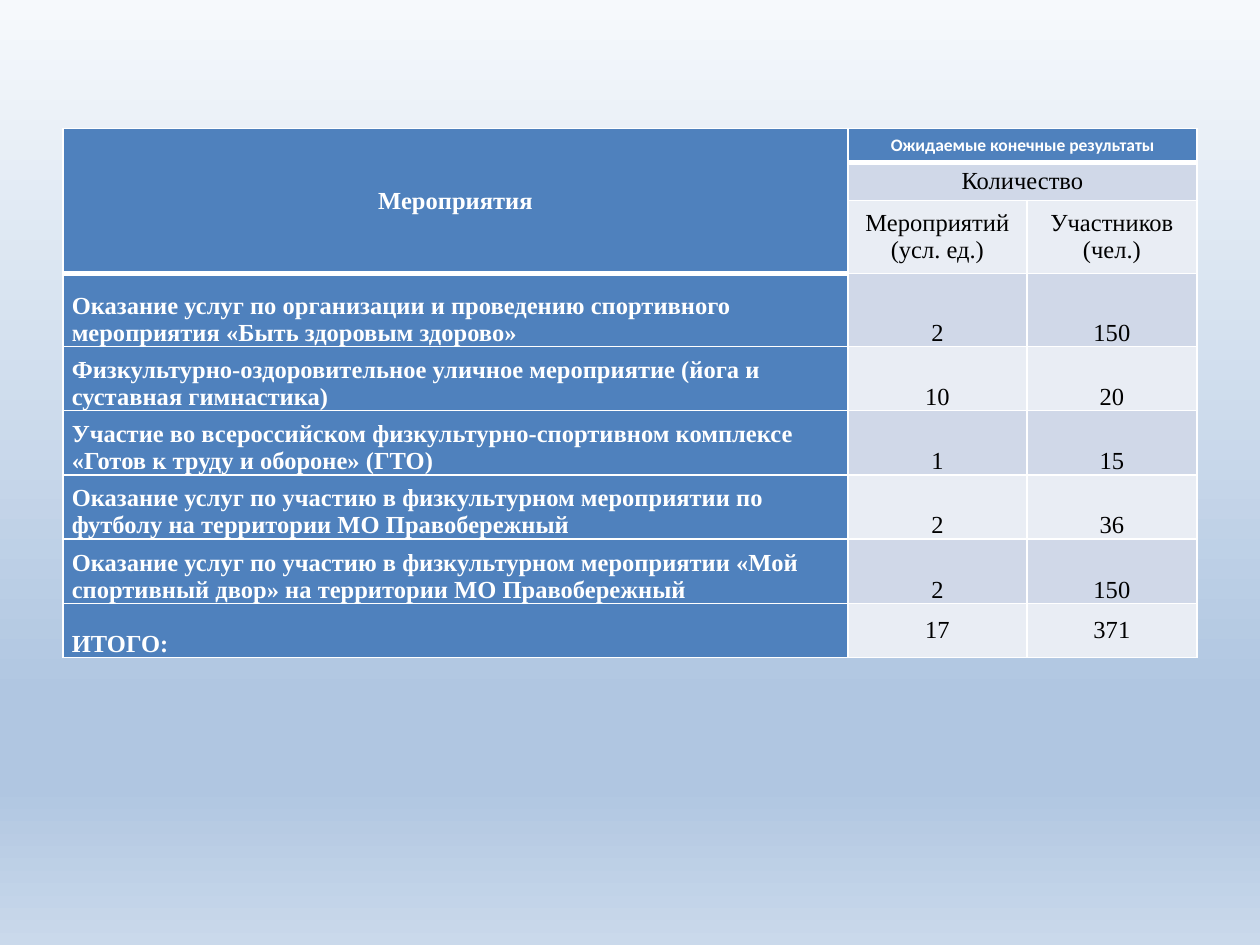
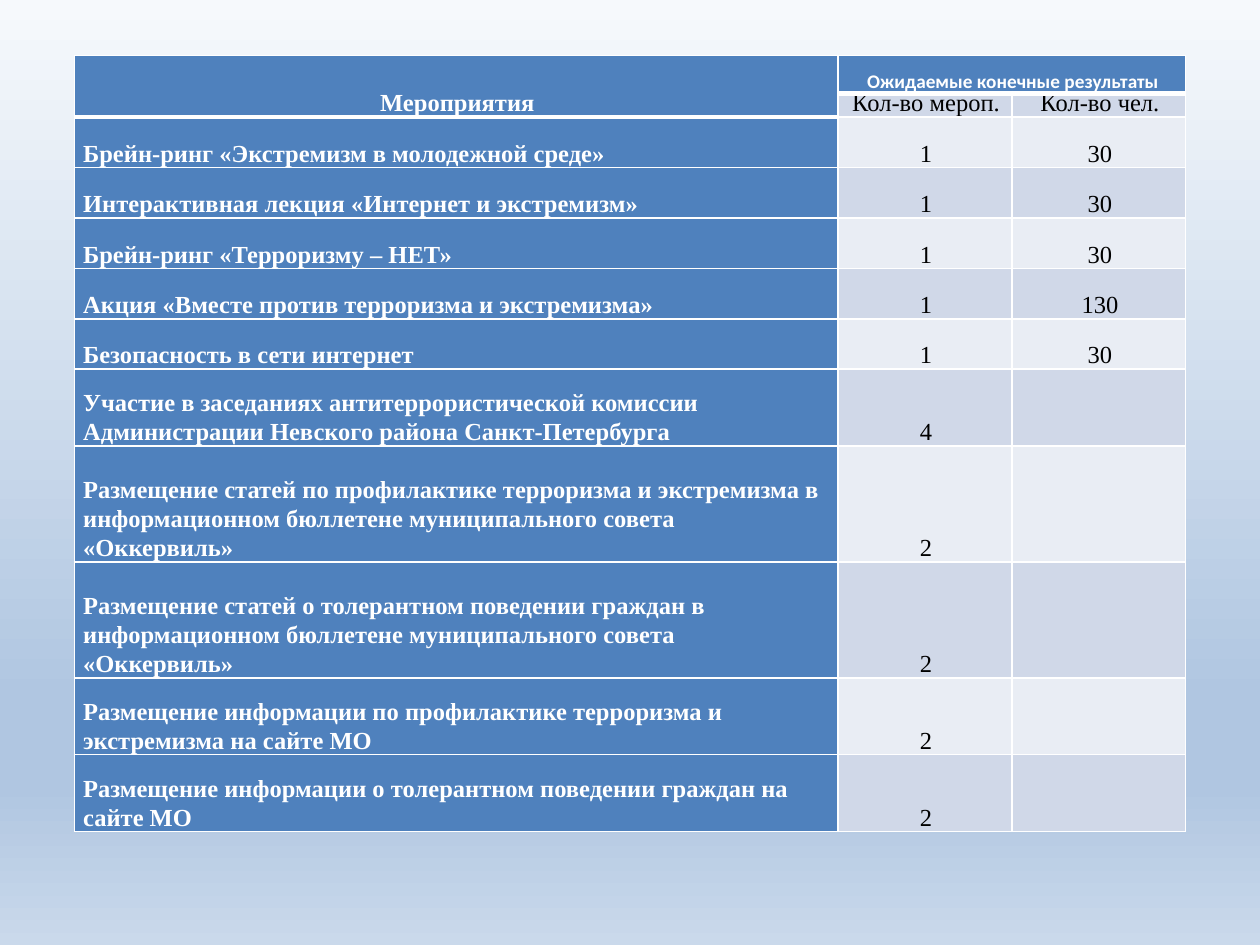
from dataclasses import dataclass
from typing import NamedTuple, Optional

from lxml.etree import SubElement
from pptx import Presentation
from pptx.dml.color import RGBColor
from pptx.enum.text import MSO_ANCHOR as Anchor, PP_ALIGN as Align
from pptx.oxml.ns import qn
from pptx.util import Inches, Pt

COLORS = {
    "header": "4F81BD",
    "band_dark": "D0D8E8",
    "band_light": "E9EDF4",
    "white": "FFFFFF",
    "black": "000000",
}
BACKGROUND_STOPS = {0: "F6F9FC", 74: "B0C6E1", 83: "B0C6E1", 100: "CAD9EB"}
GRID_COLUMNS, GRID_ROWS = 1000, 750
GRID_STEP = Inches(0.01)
THIN, THICK = Pt(1), Pt(3)
BODY_FONT, CAPTION_FONT = "Times New Roman", "Calibri"
CAPTION = "Ожидаемые конечные результаты"


class Span(NamedTuple):
    top: int
    left: int
    bottom: int
    right: int


class Row(NamedTuple):
    height: int
    texts: tuple[str, str, str]
    number_anchor: Anchor = Anchor.BOTTOM


@dataclass(frozen=True)
class ResultsTable:
    left: int
    top: int
    columns: tuple[int, int, int]
    header: list[Row]
    body: list[Row]
    spans: list[Span]
    caption_size: int
    header_anchor: Anchor
    first_band: str
    label_spacing: Optional[float] = None
    number_spacing: Optional[Pt] = None
    number_indent: int = 0


SPORT_TABLE = ResultsTable(
    left=50,
    top=102,
    columns=(623, 142, 135),
    header=[
        Row(27, ("Мероприятия", CAPTION, "")),
        Row(30, ("", "Количество", "")),
        Row(58, ("", "Мероприятий (усл. ед.)", "Участников (чел.)")),
    ],
    body=[
        Row(58, ("Оказание услуг по организации и проведению спортивного мероприятия "
                 "«Быть здоровым здорово»", "2", "150")),
        Row(51, ("Физкультурно-оздоровительное уличное мероприятие "
                 "(йога и суставная гимнастика)", "10", "20")),
        Row(51, ("Участие во всероссийском физкультурно-спортивном комплексе "
                 "«Готов к труду и обороне» (ГТО)", "1", "15")),
        Row(51, ("Оказание услуг по участию в физкультурном мероприятии по футболу "
                 "на территории МО Правобережный", "2", "36")),
        Row(51, ("Оказание услуг по участию в физкультурном мероприятии «Мой спортивный двор» "
                 "на территории МО Правобережный", "2", "150")),
        Row(43, ("ИТОГО:", "17", "371"), Anchor.MIDDLE),
    ],
    spans=[Span(0, 0, 2, 0), Span(0, 1, 0, 2), Span(1, 1, 1, 2)],
    caption_size=10,
    header_anchor=Anchor.MIDDLE,
    first_band="band_dark",
)

SAFETY_TABLE = ResultsTable(
    left=59,
    top=44,
    columns=(606, 138, 138),
    header=[
        Row(30, ("Мероприятия", CAPTION, "")),
        Row(19, ("", "Кол-во мероп.", "Кол-во чел.")),
    ],
    body=[
        Row(40, ("Брейн-ринг «Экстремизм в молодежной среде»", "1", "30")),
        Row(40, ("Интерактивная лекция «Интернет и экстремизм»", "1", "30")),
        Row(40, ("Брейн-ринг «Терроризму – НЕТ»", "1", "30")),
        Row(40, ("Акция «Вместе против терроризма и экстремизма»", "1", "130")),
        Row(40, ("Безопасность в сети интернет", "1", "30")),
        Row(61, ("Участие в заседаниях антитеррористической комиссии "
                 "Администрации Невского района Санкт-Петербурга", "4", "")),
        Row(92, ("Размещение статей по профилактике терроризма и экстремизма "
                 "в информационном бюллетене муниципального совета «Оккервиль»", "2", "")),
        Row(92, ("Размещение статей о толерантном поведении граждан "
                 "в информационном бюллетене муниципального совета «Оккервиль»", "2", "")),
        Row(61, ("Размещение информации по профилактике терроризма и экстремизма "
                 "на сайте МО", "2", "")),
        Row(61, ("Размещение информации о толерантном поведении граждан "
                 "на сайте МО", "2", "")),
    ],
    spans=[Span(0, 0, 1, 0), Span(0, 1, 0, 2)],
    caption_size=11,
    header_anchor=Anchor.BOTTOM,
    first_band="band_light",
    label_spacing=1.07,
    number_spacing=Pt(11),
    number_indent=Inches(0.02),
)


def rgb(name: str) -> RGBColor:
    return RGBColor.from_string(COLORS[name])


def add_solid_fill(parent, color: str) -> None:
    fill = SubElement(parent, qn("a:solidFill"))
    SubElement(fill, qn("a:srgbClr"), val=color)


def paint_background(master) -> None:
    fill = master.background.fill
    fill.gradient()
    fill.gradient_angle = 270
    stops = master.element.find(".//" + qn("a:gsLst"))
    for stop in list(stops):
        stops.remove(stop)
    for percent, color in BACKGROUND_STOPS.items():
        stop = SubElement(stops, qn("a:gs"), pos=str(percent * 1000))
        SubElement(stop, qn("a:srgbClr"), val=color)


def set_borders(cell, top: int, bottom: int) -> None:
    properties = cell._tc.get_or_add_tcPr()
    for side, width in {"L": THIN, "R": THIN, "T": top, "B": bottom}.items():
        line = SubElement(properties, qn(f"a:ln{side}"), w=str(width))
        add_solid_fill(line, COLORS["white"])


def write_cell(cell, text: str, spec: ResultsTable, row: int, column: int) -> None:
    is_label = column == 0
    is_caption = row == 0 and not is_label
    on_header = is_label or row == 0
    is_entry = is_label and row >= len(spec.header)
    cell.text = text
    para = cell.text_frame.paragraphs[0]
    para.alignment = Align.LEFT if is_entry else Align.CENTER
    para.line_spacing = spec.label_spacing if is_entry else spec.number_spacing
    if spec.number_indent and not is_entry:
        para._p.get_or_add_pPr().set("marL", str(spec.number_indent))
    font = para.font
    font.name = CAPTION_FONT if is_caption else BODY_FONT
    font.size = Pt(spec.caption_size if is_caption else 14)
    font.bold = on_header
    font.color.rgb = rgb("white" if on_header else "black")


def format_cell(cell, spec: ResultsTable, row: int, column: int) -> None:
    header_end = len(spec.header) if column == 0 else 1
    set_borders(
        cell,
        top=THICK if row == header_end else THIN,
        bottom=THICK if row < header_end else THIN,
    )
    bands = ["band_dark", "band_light"]
    color = "header" if column == 0 or row == 0 else bands[(row - 1) % 2]
    cell.fill.solid()
    cell.fill.fore_color.rgb = rgb(color)
    cell.margin_left = cell.margin_right = Inches(0.07)
    cell.margin_top = cell.margin_bottom = 0


def add_results_table(page, spec: ResultsTable) -> None:
    rows = spec.header + spec.body
    table = page.shapes.add_table(
        len(rows),
        len(spec.columns),
        spec.left * GRID_STEP,
        spec.top * GRID_STEP,
        sum(spec.columns) * GRID_STEP,
        sum(row.height for row in rows) * GRID_STEP,
    ).table
    table.first_row = table.horz_banding = False
    for column, width in enumerate(spec.columns):
        table.columns[column].width = width * GRID_STEP
    for span in spec.spans:
        table.cell(span.top, span.left).merge(table.cell(span.bottom, span.right))
    for index, row in enumerate(rows):
        table.rows[index].height = row.height * GRID_STEP
        for column, text in enumerate(row.texts):
            cell = table.cell(index, column)
            format_cell(cell, spec, index, column)
            if index < len(spec.header):
                cell.vertical_anchor = spec.header_anchor
            else:
                cell.vertical_anchor = Anchor.BOTTOM if column == 0 else row.number_anchor
            if text:
                write_cell(cell, text, spec, index, column)


def main() -> None:
    deck = Presentation()
    deck.slide_width = GRID_COLUMNS * GRID_STEP
    deck.slide_height = GRID_ROWS * GRID_STEP
    paint_background(deck.slide_master)
    for spec in (SPORT_TABLE, SAFETY_TABLE):
        page = deck.slides.add_slide(deck.slide_layouts[6])
        add_results_table(page, spec)
    deck.save("out.pptx")


if __name__ == "__main__":
    main()
